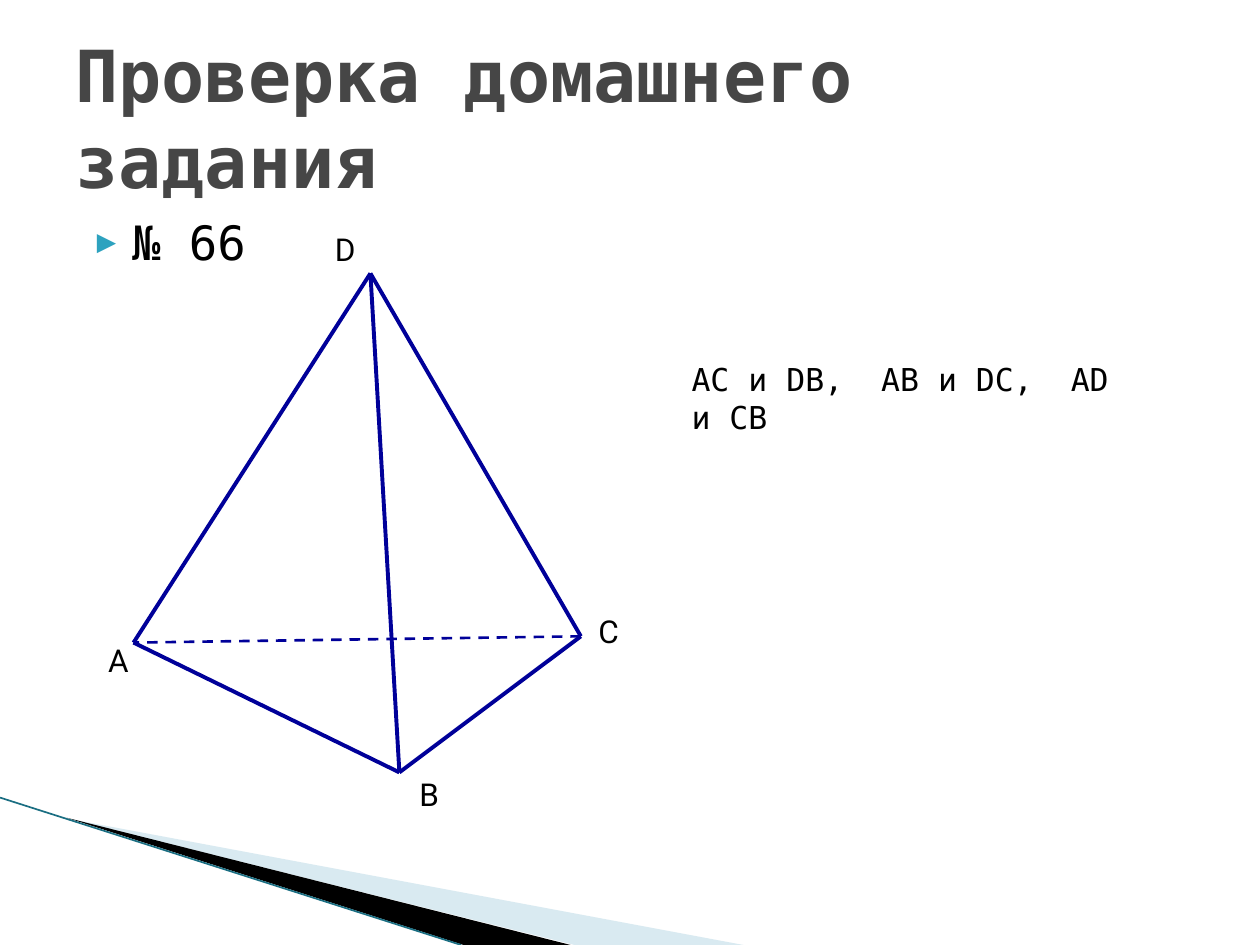
from typing import NamedTuple

from lxml import etree
from pptx import Presentation
from pptx.dml.color import RGBColor
from pptx.enum.dml import MSO_LINE
from pptx.enum.shapes import MSO_CONNECTOR
from pptx.enum.text import MSO_ANCHOR
from pptx.oxml.ns import qn
from pptx.util import Inches, Pt

STRAIGHT = MSO_CONNECTOR.STRAIGHT
DASH = MSO_LINE.DASH
MIDDLE = MSO_ANCHOR.MIDDLE
TOP = MSO_ANCHOR.TOP
MONO = "DejaVu Sans Mono"
SANS = "Roboto"
EDGE_COLOR = "000099"
BULLET_COLOR = "2DA2BF"


class Point(NamedTuple):
    x: float
    y: float


class Edge(NamedTuple):
    ends: str
    width: float = 2.25
    dashed: bool = False


class Text(NamedTuple):
    text: str
    left: float
    top: float
    width: float
    height: float
    size: float = 18
    font: str = MONO
    color: str = "000000"
    bold: bool = False
    wrap: bool = True
    anchor: MSO_ANCHOR = TOP
    bullet: bool = False


class Wedge(NamedTuple):
    points: list[Point]
    color: str
    opacity: int = 100


WEDGES = [
    Wedge([Point(0.55, 6.5), Point(5.9, 7.5), Point(4.56, 7.5)], "A0CBDC", 40),
    Wedge([Point(0.53, 6.49), Point(4.53, 7.5), Point(3.68, 7.5)], "000000"),
]

VERTICES = {
    "A": Point(1.06, 5.1),
    "B": Point(3.17, 6.13),
    "C": Point(4.61, 5.05),
    "D": Point(2.94, 2.17),
}

EDGES = [Edge("AB"), Edge("BC"), Edge("CA", 1.5, True),
         Edge("DA"), Edge("DB"), Edge("DC")]

TEXTS = [
    Text("Проверка домашнего задания", 0.5, 0.3, 9, 1.25, size=41,
         color="464646", bold=True, anchor=MIDDLE),
    Text("С", 4.65, 4.81, 0.35, 0.4, font=SANS, wrap=False),
    Text("В", 3.23, 6.1, 0.35, 0.4, font=SANS, wrap=False),
    Text("А", 0.76, 5.04, 0.35, 0.4, font=SANS, wrap=False),
    Text("D", 2.56, 1.78, 0.37, 0.4, font=SANS, wrap=False),
    Text("АС и DB,  АВ и DC,  AD и СВ", 5.39, 2.81, 3.67, 0.4),
    Text("№ 66", 0.55, 1.64, 9, 4.95, size=27, bullet=True),
]


def rgb(color: str) -> RGBColor:
    return RGBColor.from_string(color)


def add_wedge(slide, wedge: Wedge) -> None:
    start, *others = wedge.points
    builder = slide.shapes.build_freeform(
        Inches(start.x), Inches(start.y), scale=1.0)
    builder.add_line_segments([(Inches(p.x), Inches(p.y)) for p in others])
    shape = builder.convert_to_shape()
    shape.shadow.inherit = False
    shape.line.fill.background()
    shape.fill.solid()
    shape.fill.fore_color.rgb = rgb(wedge.color)
    if wedge.opacity < 100:
        color = shape.fill._xPr.find(".//" + qn("a:srgbClr"))
        etree.SubElement(color, qn("a:alpha"), val=str(wedge.opacity * 1000))


def add_line(slide, start: Point, end: Point, color: str, width: float,
             dashed: bool = False) -> None:
    connector = slide.shapes.add_connector(
        STRAIGHT, Inches(start.x), Inches(start.y), Inches(end.x), Inches(end.y))
    connector.line.color.rgb = rgb(color)
    connector.line.width = Pt(width)
    if dashed:
        connector.line.dash_style = DASH
    etree.SubElement(connector._element.spPr, qn("a:effectLst"))


def add_bullet(paragraph) -> None:
    """Give the paragraph a hanging triangle bullet."""
    properties = paragraph._p.get_or_add_pPr()
    properties.set("marL", str(Inches(0.4)))
    properties.set("indent", str(Inches(-0.28)))
    color = etree.SubElement(properties, qn("a:buClr"))
    etree.SubElement(color, qn("a:srgbClr"), val=BULLET_COLOR)
    etree.SubElement(properties, qn("a:buSzPct"), val="68000")
    etree.SubElement(properties, qn("a:buFont"), typeface=MONO)
    etree.SubElement(properties, qn("a:buChar"), char="▶")


def add_text(slide, item: Text) -> None:
    box = slide.shapes.add_textbox(Inches(item.left), Inches(item.top),
                                   Inches(item.width), Inches(item.height))
    frame = box.text_frame
    frame.word_wrap = item.wrap
    frame.vertical_anchor = item.anchor
    paragraph = frame.paragraphs[0]
    paragraph.text = item.text
    if item.bullet:
        add_bullet(paragraph)
    font = paragraph.font
    font.name = item.font
    font.size = Pt(item.size)
    font.bold = item.bold
    font.color.rgb = rgb(item.color)


def main() -> None:
    presentation = Presentation()
    presentation.slide_width = Inches(10)
    presentation.slide_height = Inches(7.5)
    slide = presentation.slides.add_slide(presentation.slide_layouts[6])

    for wedge in WEDGES:
        add_wedge(slide, wedge)
    add_line(slide, Point(0, 6.33), Point(3.66, 7.5), "1A6E82", 0.95)
    for edge in EDGES:
        start, end = (VERTICES[name] for name in edge.ends)
        add_line(slide, start, end, EDGE_COLOR, edge.width, edge.dashed)
    for item in TEXTS:
        add_text(slide, item)

    presentation.save("out.pptx")


if __name__ == "__main__":
    main()
